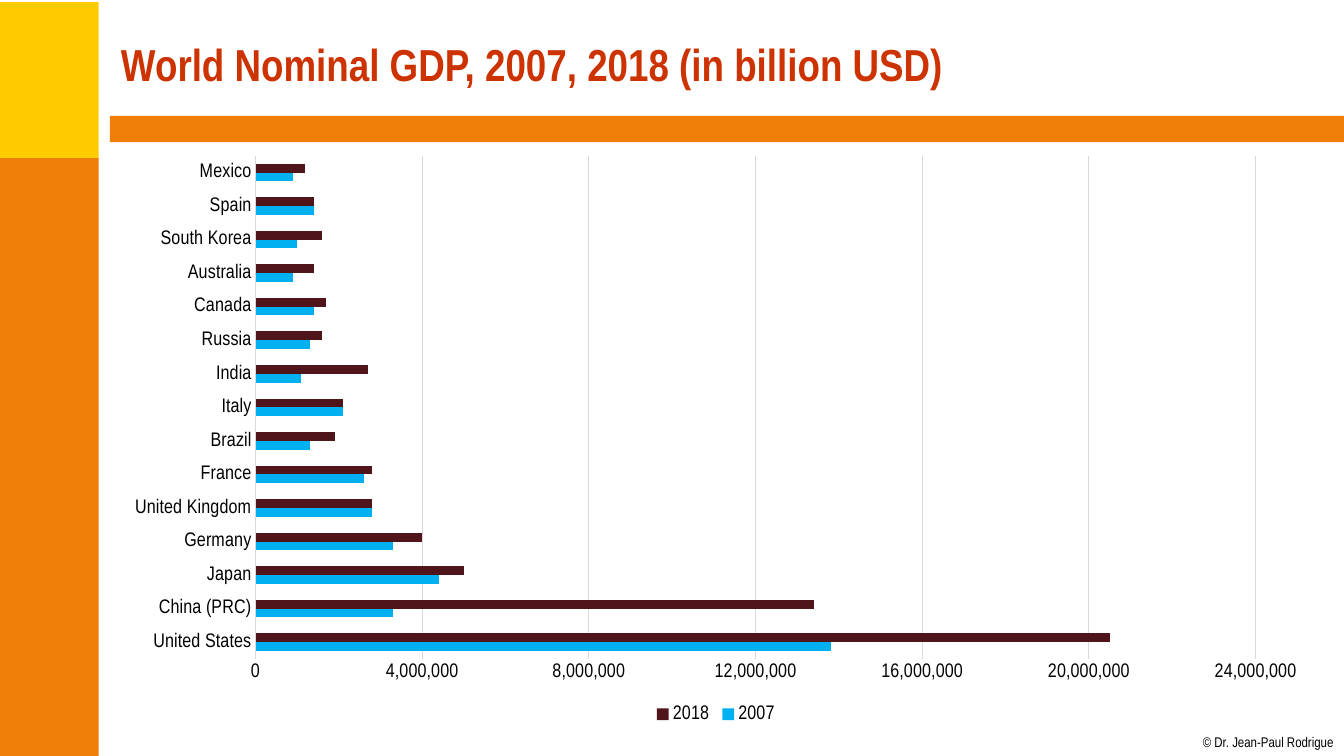
from dataclasses import dataclass

import pptx
import pptx.chart.data
import pptx.dml.color
import pptx.enum.chart
import pptx.enum.text
import pptx.enum.shapes
import pptx.util

Inches = pptx.util.Inches
Pt = pptx.util.Pt


@dataclass(frozen=True)
class Theme:
    font: str = "Arial Narrow"
    ink: str = "000000"
    head: str = "CC3300"
    gold: str = "FFCC00"
    orange: str = "F07F09"
    grid: str = "D9D9D9"
    blue: str = "00B0F0"
    maroon: str = "50141B"
    head_size: float = 32
    chart_size: float = 14
    note_size: float = 10
    line: float = 0.75


@dataclass(frozen=True)
class Band:
    left: float
    top: float
    width: float
    height: float
    color: str


@dataclass(frozen=True)
class Nation:
    name: str
    early: int
    late: int


THEME = Theme()
MILLION = 1_000_000
BANDS = [
    Band(-0.02, 0.02, 1, 1.58, THEME.gold),
    Band(-0.02, 1.57, 1, 5.93, THEME.orange),
    Band(1.09, 1.15, 12.24, 0.26, THEME.orange),
]
NATIONS = [
    Nation("United States", 13800000, 20500000),
    Nation("China (PRC)", 3300000, 13400000),
    Nation("Japan", 4400000, 5000000),
    Nation("Germany", 3300000, 4000000),
    Nation("United Kingdom", 2800000, 2800000),
    Nation("France", 2600000, 2800000),
    Nation("Brazil", 1300000, 1900000),
    Nation("Italy", 2100000, 2100000),
    Nation("India", 1100000, 2700000),
    Nation("Russia", 1300000, 1600000),
    Nation("Canada", 1400000, 1700000),
    Nation("Australia", 900000, 1400000),
    Nation("South Korea", 1000000, 1600000),
    Nation("Spain", 1400000, 1400000),
    Nation("Mexico", 900000, 1200000),
]


def rgb(color: str) -> pptx.dml.color.RGBColor:
    return pptx.dml.color.RGBColor.from_string(color)


def set_font(font, size: float, color: str, bold: bool = False) -> None:
    font.name = THEME.font
    font.size = Pt(size)
    font.bold = bold
    font.color.rgb = rgb(color)


def set_line(line) -> None:
    line.color.rgb = rgb(THEME.grid)
    line.width = Pt(THEME.line)


def draw_band(slide, band: Band) -> None:
    shape = slide.shapes.add_shape(
        pptx.enum.shapes.MSO_SHAPE.RECTANGLE,
        Inches(band.left), Inches(band.top), Inches(band.width), Inches(band.height),
    )
    shape.shadow.inherit = False
    shape.fill.solid()
    shape.fill.fore_color.rgb = rgb(band.color)
    shape.line.fill.background()


def draw_title(slide) -> None:
    title = slide.shapes.title
    title.left, title.top = Inches(1.1), Inches(0.11)
    title.width, title.height = Inches(12), Inches(1.04)
    frame = title.text_frame
    frame.auto_size = pptx.enum.text.MSO_AUTO_SIZE.NONE
    frame.vertical_anchor = pptx.enum.text.MSO_ANCHOR.MIDDLE
    para = frame.paragraphs[0]
    para.alignment = pptx.enum.text.PP_ALIGN.LEFT
    run = para.add_run()
    run.text = "World Nominal GDP, 2007, 2018 (in billion USD)"
    set_font(run.font, THEME.head_size, THEME.head, True)


def draw_credit(slide) -> None:
    box = slide.shapes.add_textbox(Inches(11.93), Inches(7.28), Inches(1.31), Inches(0.17))
    frame = box.text_frame
    frame.margin_left = frame.margin_right = frame.margin_top = frame.margin_bottom = 0
    frame.word_wrap = False
    frame.auto_size = pptx.enum.text.MSO_AUTO_SIZE.SHAPE_TO_FIT_TEXT
    run = frame.paragraphs[0].add_run()
    run.text = "© Dr. Jean-Paul Rodrigue"
    set_font(run.font, THEME.note_size, THEME.ink)


def draw_chart(slide) -> None:
    data = pptx.chart.data.CategoryChartData(number_format="#,##0")
    data.categories = [nation.name for nation in NATIONS]
    data.add_series("2007", [nation.early for nation in NATIONS])
    data.add_series("2018", [nation.late for nation in NATIONS])
    chart = slide.shapes.add_chart(
        pptx.enum.chart.XL_CHART_TYPE.BAR_CLUSTERED,
        Inches(1.1), Inches(1.43), Inches(12), Inches(5.79), data,
    ).chart
    chart.has_title = False
    set_font(chart.font, THEME.chart_size, THEME.ink)

    chart.has_legend = True
    chart.legend.position = pptx.enum.chart.XL_LEGEND_POSITION.BOTTOM
    chart.legend.include_in_layout = False
    set_font(chart.legend.font, THEME.chart_size, THEME.ink)

    plot = chart.plots[0]
    plot.gap_width = 182
    plot.vary_by_categories = False
    for series, color in zip(plot.series, (THEME.blue, THEME.maroon)):
        series.format.fill.solid()
        series.format.fill.fore_color.rgb = rgb(color)

    for axis in (chart.category_axis, chart.value_axis):
        axis.major_tick_mark = pptx.enum.chart.XL_TICK_MARK.NONE
        axis.minor_tick_mark = pptx.enum.chart.XL_TICK_MARK.NONE
        set_font(axis.tick_labels.font, THEME.chart_size, THEME.ink)
    set_line(chart.category_axis.format.line)

    scale = chart.value_axis
    scale.minimum_scale = 0
    scale.maximum_scale = 24 * MILLION
    scale.major_unit = 4 * MILLION
    scale.has_major_gridlines = True
    set_line(scale.major_gridlines.format.line)
    scale.format.line.fill.background()
    scale.tick_labels.number_format = "#,##0"
    scale.tick_labels.number_format_is_linked = False


def main() -> None:
    deck = pptx.Presentation()
    deck.slide_width, deck.slide_height = Inches(13.33), Inches(7.5)
    slide = deck.slides.add_slide(deck.slide_layouts[5])
    for band in BANDS:
        draw_band(slide, band)
    draw_credit(slide)
    draw_title(slide)
    draw_chart(slide)
    deck.save("out.pptx")


if __name__ == "__main__":
    main()
